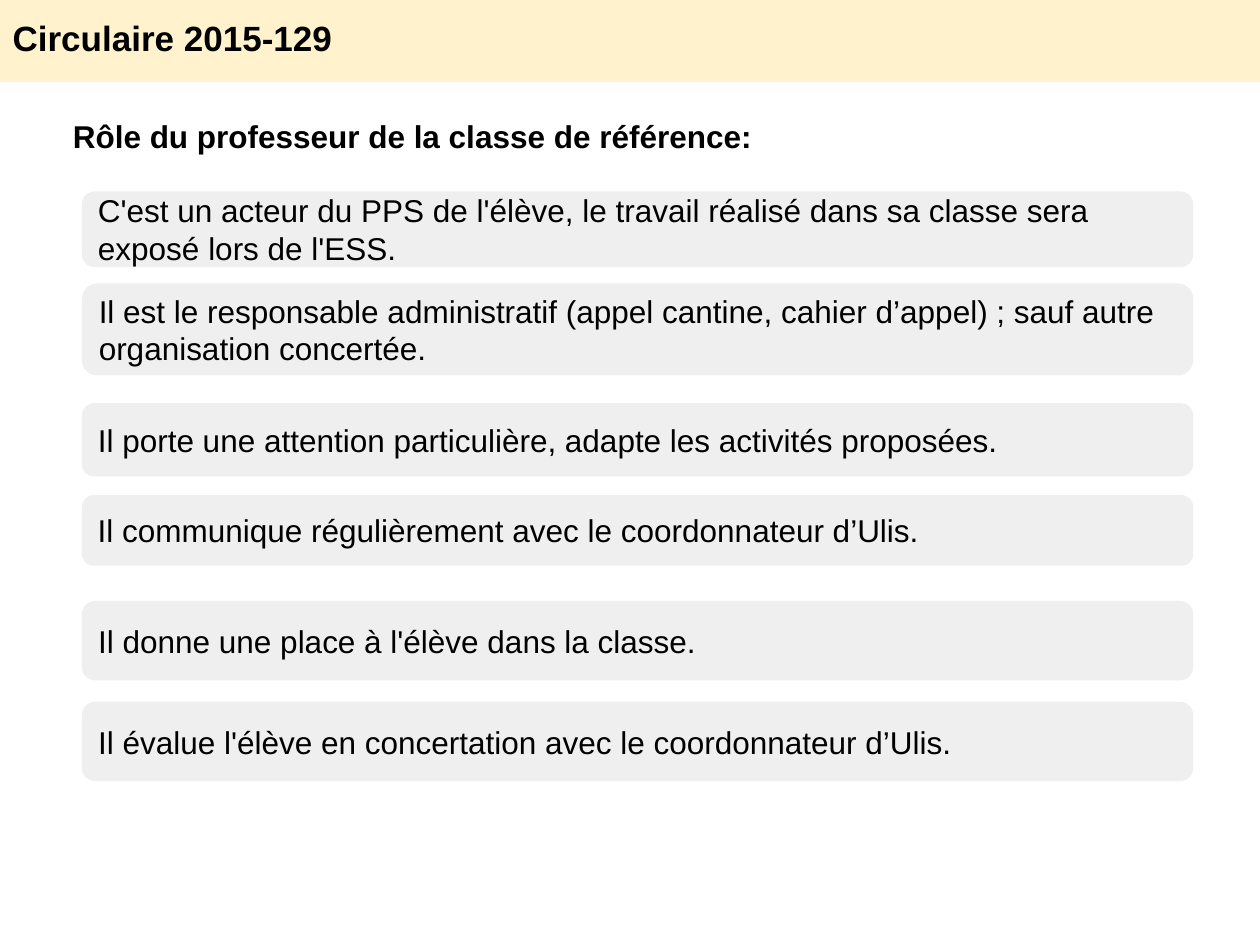
from dataclasses import dataclass

from pptx import Presentation
from pptx.dml.color import RGBColor
from pptx.enum.shapes import MSO_SHAPE
from pptx.enum.text import MSO_ANCHOR, MSO_AUTO_SIZE, PP_ALIGN
from pptx.util import Inches, Pt


@dataclass(frozen=True)
class Theme:
    font: str = "Arial"
    text: RGBColor = RGBColor(0x00, 0x00, 0x00)
    band: RGBColor = RGBColor(0xFF, 0xF2, 0xCC)
    card: RGBColor = RGBColor(0xEF, 0xEF, 0xEF)
    title_size: Pt = Pt(20)
    body_size: Pt = Pt(18)


THEME = Theme()
CARD_LEFT, CARD_WIDTH = 0.65, 8.82
ROLES = [
    (1.52, 0.6, "C'est un acteur du PPS de l'élève, le travail réalisé dans sa classe sera exposé lors de l'ESS."),
    (2.25, 0.73, "Il est le responsable administratif (appel cantine, cahier d’appel) ; sauf autre organisation concertée."),
    (3.2, 0.58, "Il porte une attention particulière, adapte les activités proposées."),
    (3.93, 0.56, "Il communique régulièrement avec le coordonnateur d’Ulis."),
    (4.77, 0.63, "Il donne une place à l'élève dans la classe."),
    (5.57, 0.63, "Il évalue l'élève en concertation avec le coordonnateur d’Ulis."),
]


def to_inches(box):
    return [Inches(length) for length in box]


def write_text(shape, text, size, bold=False, anchor=MSO_ANCHOR.MIDDLE):
    frame = shape.text_frame
    frame.word_wrap = True
    frame.auto_size = MSO_AUTO_SIZE.NONE
    frame.vertical_anchor = anchor
    paragraph = frame.paragraphs[0]
    paragraph.alignment = PP_ALIGN.LEFT
    run = paragraph.add_run()
    run.text = text
    run.font.name = THEME.font
    run.font.size = size
    run.font.bold = bold
    run.font.color.rgb = THEME.text


def place_title(slide, box, text):
    title = slide.shapes.title
    title.left, title.top, title.width, title.height = to_inches(box)
    title.fill.solid()
    title.fill.fore_color.rgb = THEME.band
    write_text(title, text, THEME.title_size, bold=True)


def add_heading(slide, box, text):
    heading = slide.shapes.add_textbox(*to_inches(box))
    write_text(heading, text, THEME.body_size, bold=True, anchor=MSO_ANCHOR.TOP)


def add_role_card(slide, box, text):
    card = slide.shapes.add_shape(MSO_SHAPE.ROUNDED_RECTANGLE, *to_inches(box))
    card.shadow.inherit = False
    card.fill.solid()
    card.fill.fore_color.rgb = THEME.card
    card.line.fill.background()
    write_text(card, text, THEME.body_size)


def main():
    presentation = Presentation()
    presentation.slide_width = Inches(10)
    presentation.slide_height = Inches(7.5)
    slide = presentation.slides.add_slide(presentation.slide_layouts.get_by_name("Title Only"))
    place_title(slide, (0, -0.06, 10, 0.71), "Circulaire 2015-129")
    add_heading(slide, (0.48, 0.88, 8.99, 0.4), "Rôle du professeur de la classe de référence:")
    for top, height, text in ROLES:
        add_role_card(slide, (CARD_LEFT, top, CARD_WIDTH, height), text)
    presentation.save("out.pptx")


if __name__ == "__main__":
    main()
